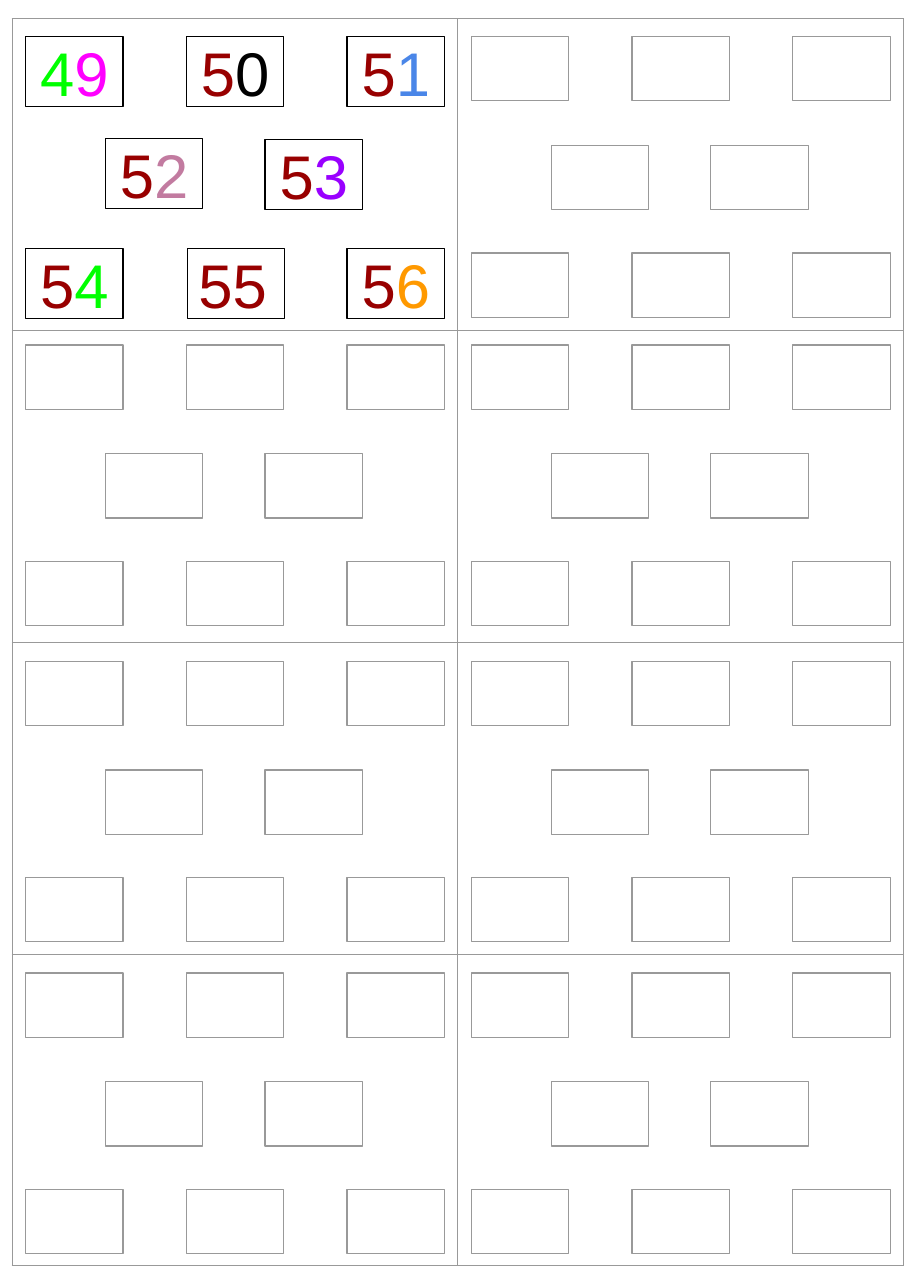
import pptx
import pptx.util
import pptx.dml.color
import pptx.enum.shapes
import pptx.enum.text
import pptx.oxml
import pptx.oxml.ns

Inches = pptx.util.Inches
RGBColor = pptx.dml.color.RGBColor
PP_ALIGN = pptx.enum.text.PP_ALIGN

GREY = RGBColor(0x99, 0x99, 0x99)
BLACK = RGBColor(0x00, 0x00, 0x00)
WHITE = RGBColor(0xFF, 0xFF, 0xFF)
DARK_RED = RGBColor(0x98, 0x00, 0x00)
GREEN = RGBColor(0x00, 0xFF, 0x00)
MAGENTA = RGBColor(0xFF, 0x00, 0xFF)
BLUE = RGBColor(0x4A, 0x86, 0xE8)
PINK = RGBColor(0xC2, 0x7B, 0xA0)
PURPLE = RGBColor(0x99, 0x00, 0xFF)
ORANGE = RGBColor(0xFF, 0x99, 0x00)

PANEL_LEFTS = (0.23, 4.25)
PANEL_TOPS = (0.33, 3.11, 5.96, 8.77)
BOX_OFFSETS = [(x, y) for y, xs in ((0, (0, 1.45, 2.9)),
                                    (0.98, (0.72, 2.16)),
                                    (1.95, (0, 1.45, 2.9))) for x in xs]
CARDS = [
    (0.23, 0.33, [("4", GREEN), ("9", MAGENTA)], PP_ALIGN.CENTER),
    (1.68, 0.33, [("5", DARK_RED), ("0", BLACK)], PP_ALIGN.CENTER),
    (3.13, 0.33, [("5", DARK_RED), ("1", BLUE)], PP_ALIGN.CENTER),
    (0.95, 1.25, [("5", DARK_RED), ("2", PINK)], PP_ALIGN.CENTER),
    (2.39, 1.26, [("5", DARK_RED), ("3", PURPLE)], PP_ALIGN.CENTER),
    (0.23, 2.24, [("5", DARK_RED), ("4", GREEN)], PP_ALIGN.CENTER),
    (1.69, 2.24, [("55", DARK_RED)], PP_ALIGN.LEFT),
    (3.13, 2.24, [("5", DARK_RED), ("6", ORANGE)], PP_ALIGN.CENTER),
]


def add_text(p, text, font="Arial", size=40, color=BLACK):
    r = p.add_run()
    r.text = text
    r.font.name = font
    r.font.size = pptx.util.Pt(size)
    r.font.color.rgb = color


class Sheet:
    """Holds the style and the current slide of a number-card sheet."""

    line_width = pptx.util.Pt(0.75)
    box_width = 0.88

    def __init__(self, slide):
        self.s = slide

    def table(self, left, top, cols, rows, width, height):
        table = self.s.shapes.add_table(
            rows, cols, Inches(left), Inches(top),
            Inches(cols * width), Inches(rows * height)).table
        table.first_row = False
        table.horz_banding = False
        for column in table.columns:
            column.width = Inches(width)
        for row in table.rows:
            row.height = Inches(height)
        for cell in table.iter_cells():
            self.borders(cell)
            cell.fill.background()

    def borders(self, cell):
        tc_pr = cell._tc.get_or_add_tcPr()
        for side in ("lnL", "lnR", "lnT", "lnB"):
            tc_pr.append(pptx.oxml.parse_xml(
                f'<a:{side} {pptx.oxml.ns.nsdecls("a")} w="{self.line_width}">'
                f'<a:solidFill><a:srgbClr val="{GREY}"/></a:solidFill></a:{side}>'))

    def box(self, left, top, height=0.58, line=GREY):
        sp = self.s.shapes.add_shape(
            pptx.enum.shapes.MSO_SHAPE.RECTANGLE, Inches(left), Inches(top),
            Inches(self.box_width), Inches(height))
        sp.shadow.inherit = False
        sp.fill.background()
        sp.line.color.rgb = line
        sp.line.width = self.line_width
        return sp

    def card(self, left, top, digits, align):
        sp = self.box(left, top, height=0.63, line=BLACK)
        sp.fill.solid()
        sp.fill.fore_color.rgb = WHITE
        tf = sp.text_frame
        tf.word_wrap = True
        tf.vertical_anchor = pptx.enum.text.MSO_ANCHOR.MIDDLE
        tf.margin_left = tf.margin_right = Inches(0.1)
        tf.margin_top = tf.margin_bottom = Inches(0.1)
        p = tf.paragraphs[0]
        p.alignment = align
        for text, color in digits:
            add_text(p, text, color=color)


def main():
    prs = pptx.Presentation()
    prs.slide_width = Inches(8.27)
    prs.slide_height = Inches(11.61)
    sheet = Sheet(prs.slides.add_slide(prs.slide_layouts[6]))

    sheet.table(0.11, 0.17, cols=2, rows=4, width=4.02, height=2.81)
    panels = [(x, y) for y in PANEL_TOPS for x in PANEL_LEFTS]
    for left, top in panels[1:]:
        for dx, dy in BOX_OFFSETS:
            sheet.box(left + dx, top + dy)
    for card in CARDS:
        sheet.card(*card)

    prs.save("out.pptx")


if __name__ == "__main__":
    main()
